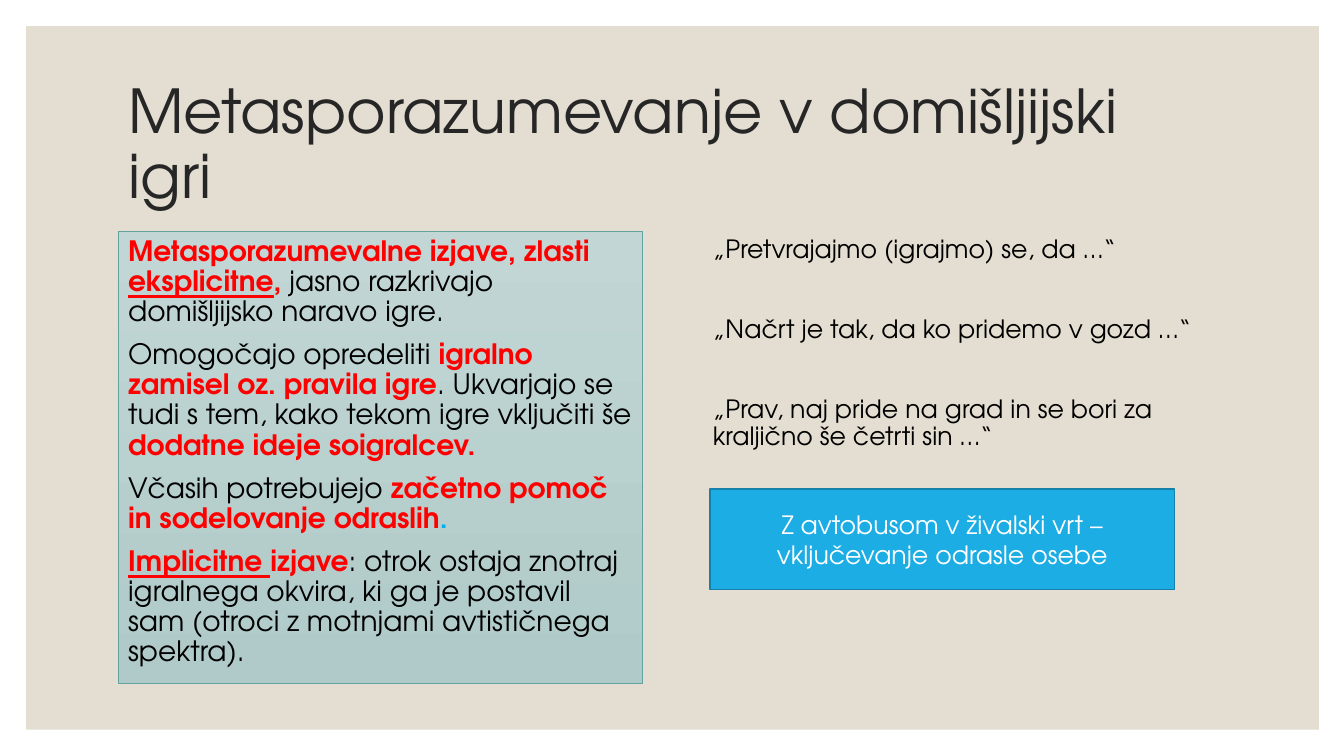
from pptx import Presentation
from pptx.dml.color import RGBColor
from pptx.enum.shapes import MSO_SHAPE
from pptx.enum.text import MSO_ANCHOR, MSO_AUTO_SIZE, PP_ALIGN
from pptx.oxml.ns import qn
from pptx.util import Inches, Pt
from lxml.etree import SubElement

FONT = "TeX Gyre Adventor"
COLORS = {
    "panel": "E3DED1", "title": "262626", "text": "000000", "key": "FF0000",
    "dot": "00B0F0", "white": "FFFFFF", "box_top": "C2D7D5", "box_bottom": "AFCAC8",
    "box_line": "62A39F", "callout": "1CADE4", "callout_line": "1580A9",
}
# Run styles: colour, bold, underline
STYLES = {
    "title": ("title", False, False),
    "plain": ("text", False, False),
    "key": ("key", True, False),
    "key_underlined": ("key", True, True),
    "dot": ("dot", True, False),
    "callout": ("white", False, False),
}

TITLE = [[("Metasporazumevanje v domišljijski igri", "title")]]
STATEMENTS = [
    [("Metasporazumevalne izjave, zlasti ", "key"), ("eksplicitne", "key_underlined"),
     (", ", "key"), ("jasno razkrivajo domišljijsko naravo igre.", "plain")],
    [("Omogočajo opredeliti ", "plain"), ("igralno zamisel oz. pravila igre", "key"),
     (". Ukvarjajo se tudi s tem, kako tekom igre vključiti še ", "plain"),
     ("dodatne ideje soigralcev.", "key")],
    [("Včasih potrebujejo ", "plain"), ("začetno pomoč in sodelovanje odraslih", "key"),
     (".", "dot")],
    [("Implicitne ", "key_underlined"), ("izjave", "key"),
     (": otrok ostaja znotraj igralnega okvira, ki ga je postavil sam "
      "(otroci z motnjami avtističnega spektra).", "plain")],
]
EXAMPLES = [
    [("„Pretvrajajmo (igrajmo) se, da …“", "plain")],
    [("„Načrt je tak, da ko pridemo v gozd …“", "plain")],
    [("„Prav, naj pride na grad in se bori za kraljično še četrti sin …“", "plain")],
]
CALLOUT = [[("Z avtobusom v živalski vrt – vključevanje odrasle osebe", "callout")]]


def color(name):
    return RGBColor.from_string(COLORS[name])


def place(shape, left, top, width, height):
    shape.left, shape.top = Inches(left), Inches(top)
    shape.width, shape.height = Inches(width), Inches(height)


def write(shape, paragraphs, size, anchor=MSO_ANCHOR.TOP, align=PP_ALIGN.LEFT,
          line_spacing=0.9, gap=0):
    """Fill a shape with unbulleted paragraphs, gap points apart."""
    frame = shape.text_frame
    frame.word_wrap = True
    frame.auto_size = MSO_AUTO_SIZE.NONE
    frame.vertical_anchor = anchor
    for index, runs in enumerate(paragraphs):
        paragraph = frame.add_paragraph() if index else frame.paragraphs[0]
        paragraph.alignment = align
        paragraph.line_spacing = line_spacing
        paragraph.space_before = Pt(gap if index else 0)
        properties = paragraph._p.get_or_add_pPr()
        properties.set("marL", "0")
        properties.set("indent", "0")
        SubElement(properties, qn("a:buNone"))
        for text, style in runs:
            color_name, bold, underline = STYLES[style]
            run = paragraph.add_run()
            run.text = text
            run.font.name = FONT
            run.font.size = Pt(size)
            run.font.bold = bold
            run.font.underline = underline
            run.font.color.rgb = color(color_name)


def add_rectangle(slide, bounds, fill, line=None):
    shape = slide.shapes.add_shape(MSO_SHAPE.RECTANGLE, *map(Inches, bounds))
    shape.shadow.inherit = False
    shape.fill.solid()
    shape.fill.fore_color.rgb = color(fill)
    if line:
        shape.line.color.rgb = color(line)
        shape.line.width = Pt(1)
    else:
        shape.line.fill.background()
    return shape


def main():
    presentation = Presentation()
    presentation.slide_width, presentation.slide_height = Inches(13.33), Inches(7.5)
    slide = presentation.slides.add_slide(presentation.slide_layouts.get_by_name("Two Content"))
    title, statements, examples = list(slide.placeholders)[:3]

    panel = add_rectangle(slide, (0.26, 0.26, 12.82, 6.98), "panel")
    title.element.addprevious(panel.element)  # send behind the text

    place(title, 1.17, 0.7, 11, 1.5)
    write(title, TITLE, 43.2, anchor=MSO_ANCHOR.MIDDLE)

    place(statements, 1.17, 2.3, 5.2, 4.48)
    statements.fill.gradient()
    statements.fill.gradient_angle = 270
    for stop, name in zip(statements.fill.gradient_stops, ("box_top", "box_bottom")):
        stop.color.rgb = color(name)
    statements.line.color.rgb = color("box_line")
    statements.line.width = Pt(0.5)
    write(statements, STATEMENTS, 20, gap=9)

    place(examples, 6.97, 2.3, 5.2, 4.37)
    write(examples, EXAMPLES, 18, gap=37.5)

    callout = add_rectangle(slide, (7.04, 4.85, 4.61, 1), "callout", "callout_line")
    write(callout, CALLOUT, 18, anchor=MSO_ANCHOR.MIDDLE, align=PP_ALIGN.CENTER,
          line_spacing=1.0)

    presentation.save("out.pptx")


if __name__ == "__main__":
    main()
